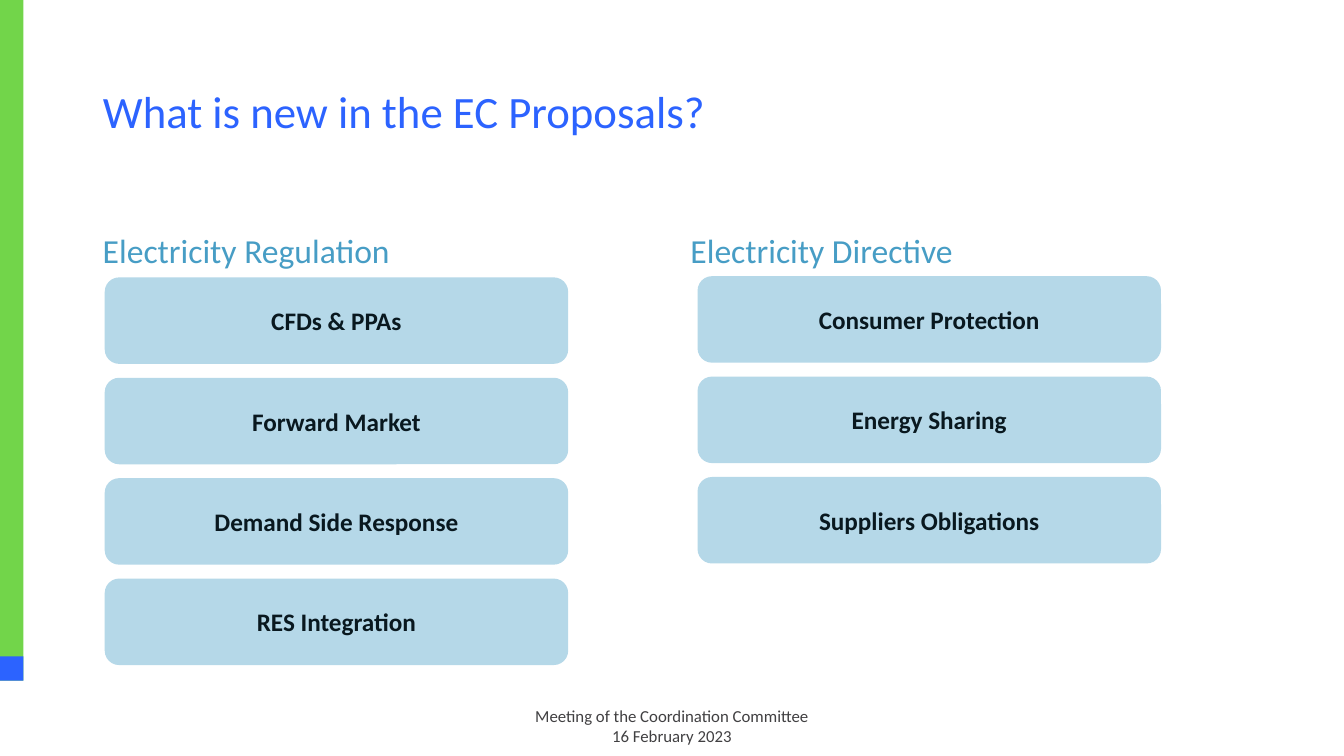
from pptx import Presentation
from pptx.dml.color import RGBColor
from pptx.enum.shapes import MSO_SHAPE
from pptx.enum.text import MSO_ANCHOR, MSO_AUTO_SIZE, PP_ALIGN
from pptx.util import Cm, Pt

RECT, ROUNDED = MSO_SHAPE.RECTANGLE, MSO_SHAPE.ROUNDED_RECTANGLE
TOP, MIDDLE, BOTTOM = MSO_ANCHOR.TOP, MSO_ANCHOR.MIDDLE, MSO_ANCHOR.BOTTOM
LEFT, CENTER = PP_ALIGN.LEFT, PP_ALIGN.CENTER
NO_AUTOFIT = MSO_AUTO_SIZE.NONE

FONT = "Calibri"
COLORS = {
    "green": "72D54A",
    "blue": "2C63FF",
    "heading": "479DC5",
    "box": "B5D8E8",
    "box_text": "09181F",
    "footer": "414042",
}

TITLE = "What is new in the EC Proposals?"
FOOTER = "Meeting of the Coordination Committee\n16 February 2023"
COLUMNS = [
    {
        "heading": "Electricity Regulation",
        "heading_left": 2.34,
        "left": 2.64,
        "top": 6.99,
        "topics": ["CFDs & PPAs", "Forward Market", "Demand Side Response", "RES Integration"],
    },
    {
        "heading": "Electricity Directive",
        "heading_left": 17.15,
        "left": 17.58,
        "top": 6.96,
        "topics": ["Consumer Protection", "Energy Sharing", "Suppliers Obligations"],
    },
]
# Lengths in centimetres
SIDE_BARS = [("green", 0, 17.15), ("blue", 16.54, 0.61)]
BAR_W = 0.59
BOX_W, BOX_H, BOX_PITCH = 11.68, 2.18, 2.53
HEADING_TOP, HEADING_W, HEADING_H = 4.67, 14.35, 2.29


def rgb(name):
    return RGBColor.from_string(COLORS[name])


def write(sp, text, size, color, align=LEFT, anchor=MIDDLE, bold=False, spacing=1.0):
    tf = sp.text_frame
    tf.text = text
    tf.word_wrap = True
    tf.auto_size = NO_AUTOFIT
    tf.vertical_anchor = anchor
    for p in tf.paragraphs:
        p.alignment = align
        p.line_spacing = spacing
        for r in p.runs:
            r.font.name = FONT
            r.font.size = Pt(size)
            r.font.bold = bold
            r.font.color.rgb = rgb(color)


def add_block(slide, kind, box, color):
    sp = slide.shapes.add_shape(kind, *map(Cm, box))
    sp.shadow.inherit = False
    sp.fill.solid()
    sp.fill.fore_color.rgb = rgb(color)
    sp.line.fill.background()
    return sp


def add_column(slide, column):
    heading = slide.shapes.add_textbox(
        Cm(column["heading_left"]), Cm(HEADING_TOP), Cm(HEADING_W), Cm(HEADING_H))
    write(heading, column["heading"], 24, "heading", anchor=BOTTOM, spacing=0.9)
    for i, topic in enumerate(column["topics"]):
        box = (column["left"], column["top"] + i * BOX_PITCH, BOX_W, BOX_H)
        sp = add_block(slide, ROUNDED, box, "box")
        write(sp, topic, 18, "box_text", align=CENTER, bold=True)


def main():
    prs = Presentation()
    prs.slide_width, prs.slide_height = Cm(33.87), Cm(19.05)
    slide = prs.slides.add_slide(prs.slide_layouts[5])

    for color, top, height in SIDE_BARS:
        add_block(slide, RECT, (0, top, BAR_W, height), color)

    footer = slide.shapes.add_textbox(Cm(10.46), Cm(17.65), Cm(12.95), Cm(1.27))
    write(footer, FOOTER, 12, "footer", align=CENTER, anchor=TOP)

    title = slide.shapes.title
    title.left, title.top, title.width, title.height = map(Cm, (2.34, 1.02, 29.21, 3.68))
    write(title, TITLE, 32, "blue", spacing=0.9)

    for column in COLUMNS:
        add_column(slide, column)

    prs.save("out.pptx")


if __name__ == "__main__":
    main()
